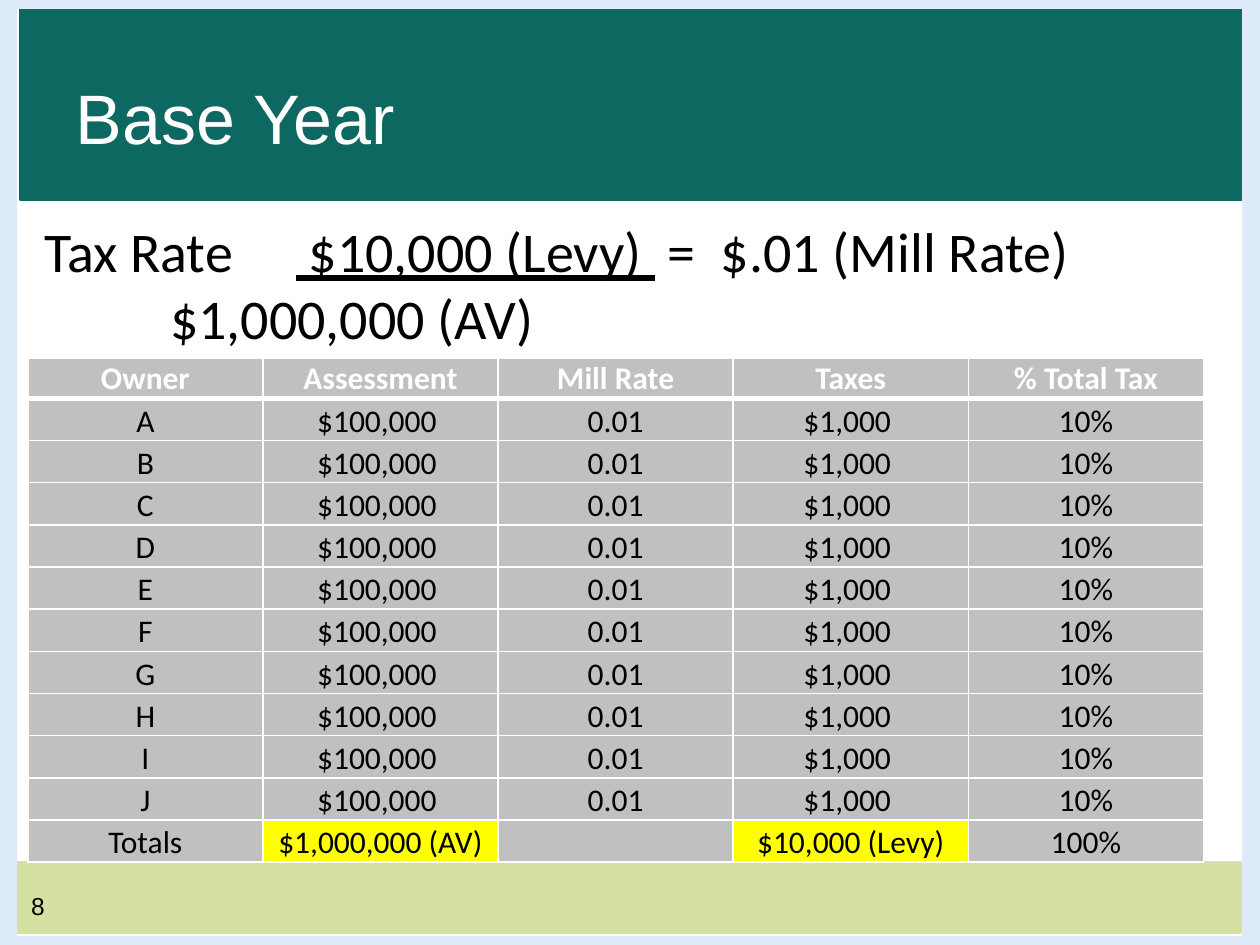
from lxml.etree import SubElement
from pptx import Presentation
from pptx.dml.color import RGBColor
from pptx.enum.shapes import MSO_SHAPE
from pptx.enum.text import MSO_ANCHOR, PP_ALIGN
from pptx.oxml import parse_xml
from pptx.oxml.ns import nsdecls, qn
from pptx.util import Cm, Pt

TEAL = RGBColor(0x0D, 0x68, 0x61)
LIME = RGBColor(0xD5, 0xE1, 0xA3)
PALE = RGBColor(0xDD, 0xEA, 0xF9)
GREY = RGBColor(0xC0, 0xC0, 0xC0)
YELLOW = RGBColor(0xFF, 0xFF, 0x00)
WHITE = RGBColor(0xFF, 0xFF, 0xFF)
BLACK = RGBColor(0x00, 0x00, 0x00)

TITLE = "Base Year"
PAGE = "8"
FORMULA = [
    [("Tax Rate\t", False), (" $10,000 (Levy) ", True), (" =  $.01 (Mill Rate)", False)],
    [(" \t\t$1,000,000 (AV)", False)],
]
HEADER = ["Owner", "Assessment", "Mill Rate", "Taxes", "% Total Tax"]
OWNERS = [[name, "$100,000 ", "0.01", "$1,000 ", "10%"] for name in "ABCDEFGHIJ"]
TOTALS = ["Totals", "$1,000,000 (AV)", "", "$10,000 (Levy)", "100%"]
ROWS = [HEADER, *OWNERS, TOTALS]
HIGHLIGHTS = ("$1,000,000 (AV)", "$10,000 (Levy)")

BANDS = [
    (0.3, 17.4, 24.71, 1.4, LIME),
    (0.41, 0.2, 24.64, 3.81, TEAL),
    (0, 0, 25.4, 0.15, PALE),
    (0.01, 0.14, 0.3, 18.82, PALE),
    (25.08, 0.06, 0.3, 18.82, PALE),
    (0, 18.9, 25.4, 0.15, PALE),
]
COL_WIDTH, HEADER_HEIGHT, ROW_HEIGHT = 4.74, 0.81, 0.85


def style(r, size, color, name):
    r.font.size = Pt(size)
    r.font.name = name
    r.font.color.rgb = color


def add_band(s, left, top, width, height, color):
    sp = s.shapes.add_shape(MSO_SHAPE.RECTANGLE, Cm(left), Cm(top), Cm(width), Cm(height))
    sp.shadow.inherit = False
    sp.fill.solid()
    sp.fill.fore_color.rgb = color
    sp.line.color.rgb = color
    sp.line.width = Pt(2)


def add_text(s, left, top, width, height):
    tf = s.shapes.add_textbox(Cm(left), Cm(top), Cm(width), Cm(height)).text_frame
    tf.word_wrap = True
    return tf


def set_borders(cell, bottom):
    tc_pr = cell._tc.get_or_add_tcPr()
    for side, width in (("lnL", 1), ("lnR", 1), ("lnT", 1), ("lnB", bottom)):
        ln = SubElement(tc_pr, qn(f"a:{side}"), w=str(Pt(width)))
        fill = SubElement(ln, qn("a:solidFill"))
        SubElement(fill, qn("a:srgbClr"), val=str(WHITE))


def fill_cell(cell, text, is_header):
    set_borders(cell, 3 if is_header else 1)
    cell.margin_left = cell.margin_right = cell.margin_top = Cm(0.02)
    cell.margin_bottom = 0
    cell.vertical_anchor = MSO_ANCHOR.MIDDLE if is_header else MSO_ANCHOR.BOTTOM
    cell.fill.solid()
    cell.fill.fore_color.rgb = YELLOW if text in HIGHLIGHTS else GREY
    cell.text_frame.text = text
    p = cell.text_frame.paragraphs[0]
    p.alignment = PP_ALIGN.CENTER
    for r in p.runs:
        style(r, 18, WHITE if is_header else BLACK, "Calibri")
        r.font.bold = is_header


def add_title(s):
    title = s.shapes.title
    title.element.getparent().append(title.element)
    title.left, title.top, title.width, title.height = Cm(1.27), Cm(0.76), Cm(18.85), Cm(3.18)
    tf = title.text_frame
    tf.text = TITLE
    tf.vertical_anchor = MSO_ANCHOR.MIDDLE
    p = tf.paragraphs[0]
    p.alignment = PP_ALIGN.LEFT
    r = p.runs[0]
    style(r, 40, WHITE, "Arial")
    shadow = parse_xml(
        f'<a:effectLst {nsdecls("a")}><a:outerShdw blurRad="38100" dist="38100" dir="2700000">'
        '<a:srgbClr val="000000"><a:alpha val="43000"/></a:srgbClr></a:outerShdw></a:effectLst>'
    )
    r.font._element.find(qn("a:solidFill")).addnext(shadow)


def add_tax_table(s):
    height = HEADER_HEIGHT + ROW_HEIGHT * (len(ROWS) - 1)
    table = s.shapes.add_table(
        len(ROWS), len(HEADER), Cm(0.56), Cm(7.22), Cm(COL_WIDTH * len(HEADER)), Cm(height)
    ).table
    table.horz_banding = False
    for col in table.columns:
        col.width = Cm(COL_WIDTH)
    for i, values in enumerate(ROWS):
        table.rows[i].height = Cm(ROW_HEIGHT if i else HEADER_HEIGHT)
        for j, text in enumerate(values):
            fill_cell(table.cell(i, j), text, i == 0)


def add_formula(s):
    tf = add_text(s, 0.64, 4.24, 23.93, 3)
    for i, parts in enumerate(FORMULA):
        p = tf.add_paragraph() if i else tf.paragraphs[0]
        for text, underlined in parts:
            r = p.add_run()
            r.text = text
            style(r, 32, BLACK, "Calibri")
            r.font.underline = underlined


def main():
    prs = Presentation()
    prs.slide_width, prs.slide_height = Cm(25.4), Cm(19.05)
    s = prs.slides.add_slide(prs.slide_layouts[5])
    for band in BANDS:
        add_band(s, *band)
    tf = add_text(s, 0.38, 17.83, 5.92, 1.02)
    tf.text = PAGE
    style(tf.paragraphs[0].runs[0], 14, BLACK, "Arial")
    add_title(s)
    add_tax_table(s)
    add_formula(s)
    prs.save("out.pptx")


if __name__ == "__main__":
    main()
